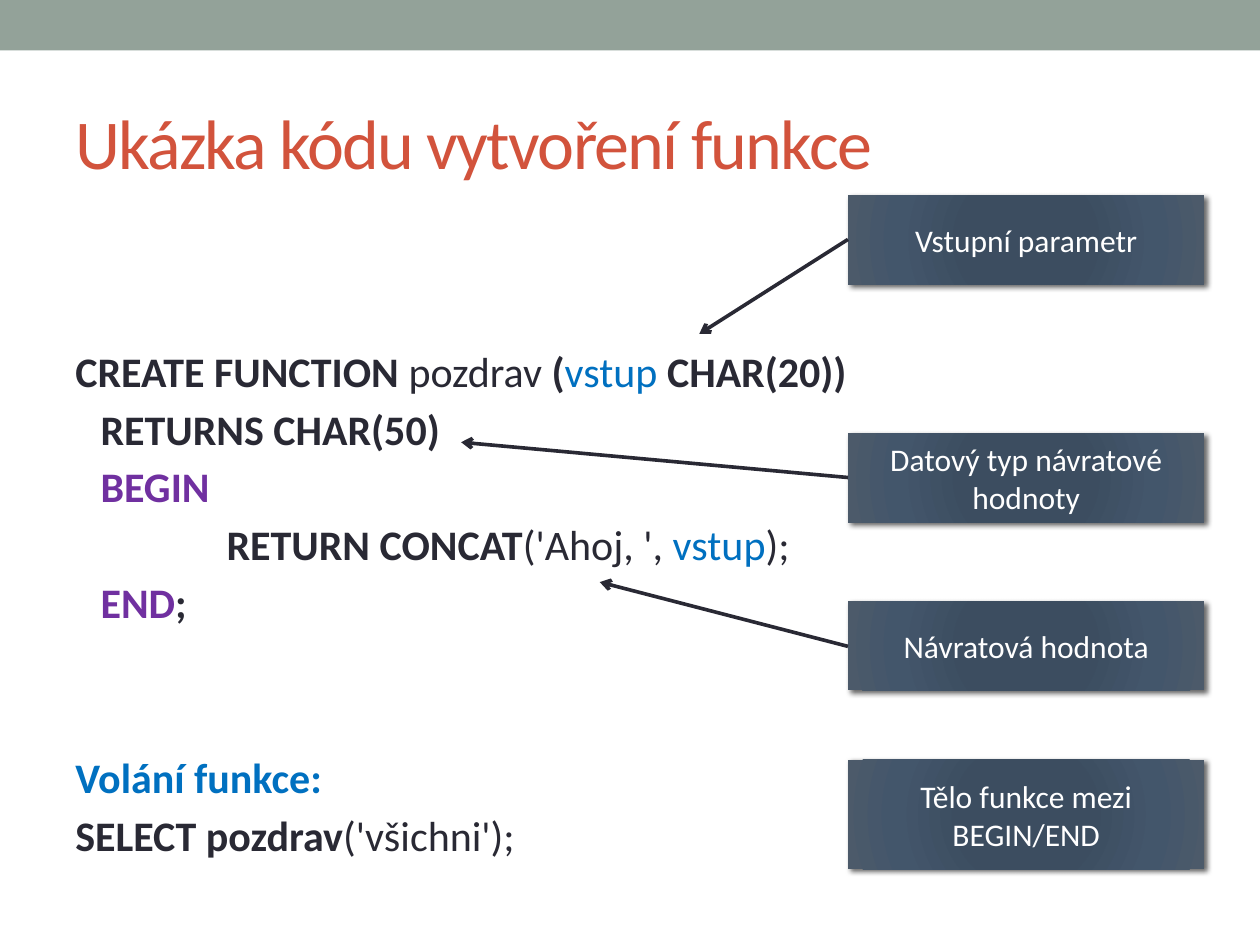
from lxml import etree
from pptx import Presentation
from pptx import util as u
from pptx.dml.color import RGBColor
from pptx.enum import shapes, text
from pptx.oxml import parse_xml

INK, BLUE, PURPLE, WHITE = "292934", "0070C0", "7030A0", "FFFFFF"
NAMESPACE = "http://schemas.openxmlformats.org/drawingml/2006/main"

presentation = Presentation()
presentation.slide_width, presentation.slide_height = u.Inches(10), u.Inches(7.5)
slide = presentation.slides.add_slide(presentation.slide_layouts[6])
UNIT = presentation.slide_width // 100  # the slide is a grid of 100 columns by 75 rows


def cells(*counts):
    """Turn counts of grid columns or rows into lengths."""
    return [round(count * UNIT) for count in counts]


def add_run(paragraph, words, color, **formats):
    run = paragraph.add_run()
    run.text = words
    run.font.color.rgb = RGBColor.from_string(color)
    for name, value in {"name": "Calibri", **formats}.items():
        setattr(run.font, name, value)
    return run


# Top band
band = slide.shapes.add_shape(shapes.MSO_SHAPE.RECTANGLE, *cells(0, 0, 100, 4))
band.shadow.inherit = False
band.fill.solid()
band.fill.fore_color.rgb = RGBColor.from_string("93A299")
band.line.fill.background()

# Title
title = slide.shapes.add_textbox(*cells(5, 5.8, 90, 10.8)).text_frame
title.word_wrap = True
title.vertical_anchor = text.MSO_ANCHOR.MIDDLE
heading = add_run(title.paragraphs[0], "Ukázka kódu vytvoření funkce", "D2533C", size=u.Pt(40))
heading.font._element.set("spc", "-100")

# Code: indent in columns, space before in points, runs of (words, colour, bold)
code_lines = [
    (0, 0, [("CREATE FUNCTION ", INK, True), ("pozdrav", INK, False), (" (", INK, True),
            ("vstup", BLUE, False), (" CHAR(20))", INK, True)]),
    (2, 4.27, [("RETURNS CHAR(50)", INK, True)]),
    (2, 4.27, [("BEGIN", PURPLE, True)]),
    (12, 4.27, [("RETURN CONCAT", INK, True), ("('Ahoj, ', ", INK, False),
                ("vstup", BLUE, False), (");", INK, False)]),
    (2, 4.27, [("END", PURPLE, True), (";", INK, True)]),
    (0, 71.4, [("Volání funkce:", BLUE, True)]),
    (0, 4.27, [("SELECT pozdrav", INK, True), ("('všichni');", INK, False)]),
]
code = slide.shapes.add_textbox(*cells(5, 26.9, 90, 43.9)).text_frame
code.word_wrap = True
for index, (indent, gap, runs) in enumerate(code_lines):
    paragraph = code.add_paragraph() if index else code.paragraphs[0]
    paragraph.space_before = u.Pt(gap)
    paragraph._p.get_or_add_pPr().set("marL", str(indent * UNIT))
    for words, color, bold in runs:
        add_run(paragraph, words, color, size=u.Pt(24), bold=bold)

# Callouts: label, top row, height in rows, arrow start row, arrow tip
callouts = [
    ("Vstupní parametr", 15.5, 7.1, 19, (55.5, 26.5)),
    ("Datový typ návratové hodnoty", 34.4, 7.1, 37.9, (36.6, 35.1)),
    ("Návratová hodnota", 47.7, 7.1, 51.3, (47.6, 46.2)),
    ("Tělo funkce mezi BEGIN/END", 60.3, 8.7, None, None),
]
stops = "".join(
    f'<a:gs pos="{position * 1000}"><a:srgbClr val="{color}"/></a:gs>'
    for position, color in [(0, "3B4D61"), (34, "3C4D60"), (70, "43566B"), (100, "4C5A6A")])
GRADIENT = (f'<a:gradFill xmlns:a="{NAMESPACE}" rotWithShape="1"><a:gsLst>{stops}</a:gsLst>'
            '<a:path path="circle"><a:fillToRect l="100000" t="100000" r="100000" b="100000"/>'
            '</a:path></a:gradFill>')
SHADOW = (f'<a:outerShdw xmlns:a="{NAMESPACE}" blurRad="{u.Pt(3)}" dist="{u.Pt(2)}" '
          'dir="2700000" rotWithShape="0"><a:srgbClr val="000000"><a:alpha val="60000"/>'
          '</a:srgbClr></a:outerShdw>')
LEFT = 67.3
for label, top, height, start, tip in callouts:
    box = slide.shapes.add_shape(shapes.MSO_SHAPE.RECTANGLE, *cells(LEFT, top, 28.3, height))
    box.fill.solid()
    box.line.fill.background()
    box.shadow.inherit = False
    properties = box._element.spPr
    properties.replace(properties.find(f"{{{NAMESPACE}}}solidFill"), parse_xml(GRADIENT))
    properties.find(f"{{{NAMESPACE}}}effectLst").append(parse_xml(SHADOW))
    box.text_frame.word_wrap = True
    box.text_frame.vertical_anchor = text.MSO_ANCHOR.MIDDLE
    paragraph = box.text_frame.paragraphs[0]
    paragraph.alignment = text.PP_ALIGN.CENTER
    add_run(paragraph, label, WHITE, size=u.Pt(18))
    if tip:
        arrow = slide.shapes.add_connector(shapes.MSO_CONNECTOR.STRAIGHT,
                                           *cells(LEFT, start, *tip))
        arrow.line.color.rgb = RGBColor.from_string(INK)
        arrow.line.width = u.Pt(2.08)
        etree.SubElement(arrow.line._get_or_add_ln(), f"{{{NAMESPACE}}}tailEnd", type="arrow")
        etree.SubElement(arrow._element.spPr, f"{{{NAMESPACE}}}effectLst")

presentation.save("out.pptx")
